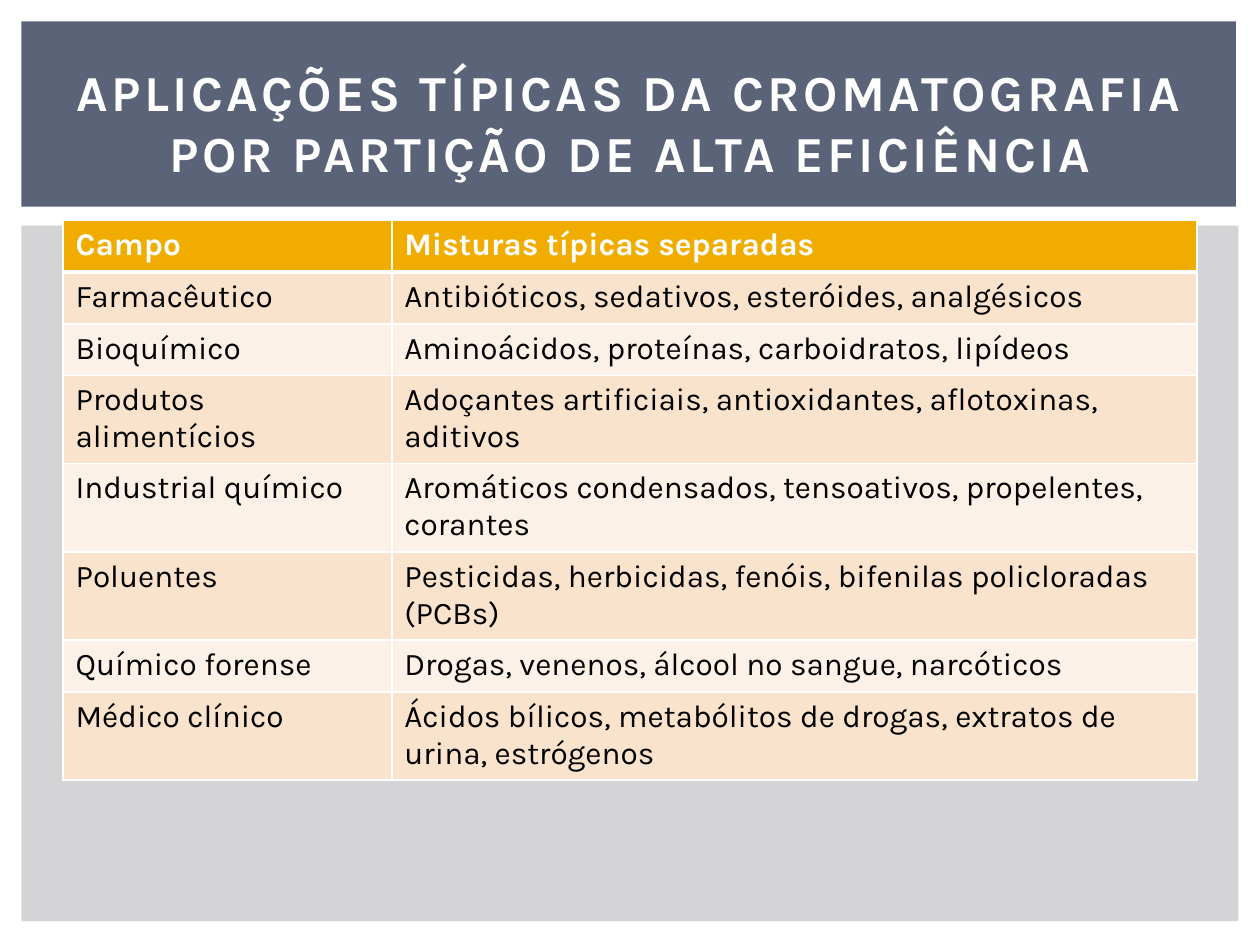
from dataclasses import dataclass

from lxml import etree
from pptx import Presentation
from pptx import util as u
from pptx.dml.color import RGBColor
from pptx.enum import shapes, text
from pptx.oxml import ns


@dataclass(frozen=True)
class Theme:
    font: str = "Karla"
    white: str = "FFFFFF"
    black: str = "000000"
    panel: str = "D4D4D6"
    band: str = "5A6378"
    head: str = "F0AD00"
    odd: str = "F9E3CC"
    even: str = "FCF1E7"
    title: float = 28.8
    body: float = 18
    track: float = 2
    rule: float = 1
    thick: float = 3


THEME = Theme()

TITLE = "APLICAÇÕES TÍPICAS DA CROMATOGRAFIA POR PARTIÇÃO DE ALTA EFICIÊNCIA"
ROWS = [
    ("Campo", "Misturas típicas separadas"),
    ("Farmacêutico", "Antibióticos, sedativos, esteróides, analgésicos"),
    ("Bioquímico", "Aminoácidos, proteínas, carboidratos, lipídeos"),
    ("Produtos alimentícios",
     "Adoçantes artificiais, antioxidantes, aflotoxinas, aditivos"),
    ("Industrial químico",
     "Aromáticos condensados, tensoativos, propelentes, corantes"),
    ("Poluentes",
     "Pesticidas, herbicidas, fenóis, bifenilas policloradas (PCBs)"),
    ("Químico forense", "Drogas, venenos, álcool no sangue, narcóticos"),
    ("Médico clínico",
     "Ácidos bílicos, metabólitos de drogas, extratos de urina, estrógenos"),
]
COLS = (2.61, 6.39)
ROW_HIGH = 0.41


def inches(*sizes):
    return [u.Inches(size) for size in sizes]


def add_run(frame, words, size, color, bold):
    run = frame.paragraphs[0].add_run()
    run.text = words
    style = {"name": THEME.font, "size": u.Pt(size), "bold": bold}
    for key, value in style.items():
        setattr(run.font, key, value)
    run.font.color.rgb = RGBColor.from_string(color)
    return run


def add_panel(slide, box, color):
    panel = slide.shapes.add_shape(shapes.MSO_SHAPE.RECTANGLE, *inches(*box))
    panel.shadow.inherit = False
    panel.fill.solid()
    panel.fill.fore_color.rgb = RGBColor.from_string(color)
    panel.line.fill.background()


def add_title(slide, box, words):
    frame = slide.shapes.add_textbox(*inches(*box)).text_frame
    frame.word_wrap = True
    frame.vertical_anchor = text.MSO_ANCHOR.MIDDLE
    frame.paragraphs[0].alignment = text.PP_ALIGN.CENTER
    run = add_run(frame, words, THEME.title, THEME.white, True)
    run._r.get_or_add_rPr().set("spc", str(int(THEME.track * 100)))


def add_edge(cell, side, width):
    """Draw one white cell border; side is L, R, T or B."""
    props = cell._tc.get_or_add_tcPr()
    line = etree.SubElement(props, ns.qn(f"a:ln{side}"), w=str(u.Pt(width)))
    fill = etree.SubElement(line, ns.qn("a:solidFill"))
    etree.SubElement(fill, ns.qn("a:srgbClr"), val=THEME.white)


def fill_cell(cell, words, row):
    head = row == 0
    edges = {
        "L": THEME.rule,
        "R": THEME.rule,
        "T": THEME.thick if row == 1 else THEME.rule,
        "B": THEME.thick if head else THEME.rule,
    }
    for side, width in edges.items():
        add_edge(cell, side, width)
    shade = THEME.head if head else THEME.odd if row % 2 else THEME.even
    cell.fill.solid()
    cell.fill.fore_color.rgb = RGBColor.from_string(shade)
    color = THEME.white if head else THEME.black
    add_run(cell.text_frame, words, THEME.body, color, head)


def add_grid(slide, left, top, rows):
    box = inches(left, top, sum(COLS), ROW_HIGH * len(rows))
    table = slide.shapes.add_table(len(rows), len(COLS), *box).table
    for col, width in zip(table.columns, COLS):
        col.width = u.Inches(width)
    for r, row in enumerate(rows):
        table.rows[r].height = u.Inches(ROW_HIGH)
        for c, words in enumerate(row):
            fill_cell(table.cell(r, c), words, r)


def main():
    deck = Presentation()
    deck.slide_width, deck.slide_height = inches(10, 7.5)
    slide = deck.slides.add_slide(deck.slide_layouts[6])
    add_panel(slide, (0.17, 1.79, 9.66, 5.52), THEME.panel)
    add_panel(slide, (0.17, 0.17, 9.64, 1.47), THEME.band)
    add_title(slide, (0.42, 0.39, 9.17, 1.15), TITLE)
    add_grid(slide, 0.5, 1.75, ROWS)
    deck.save("out.pptx")


if __name__ == "__main__":
    main()
